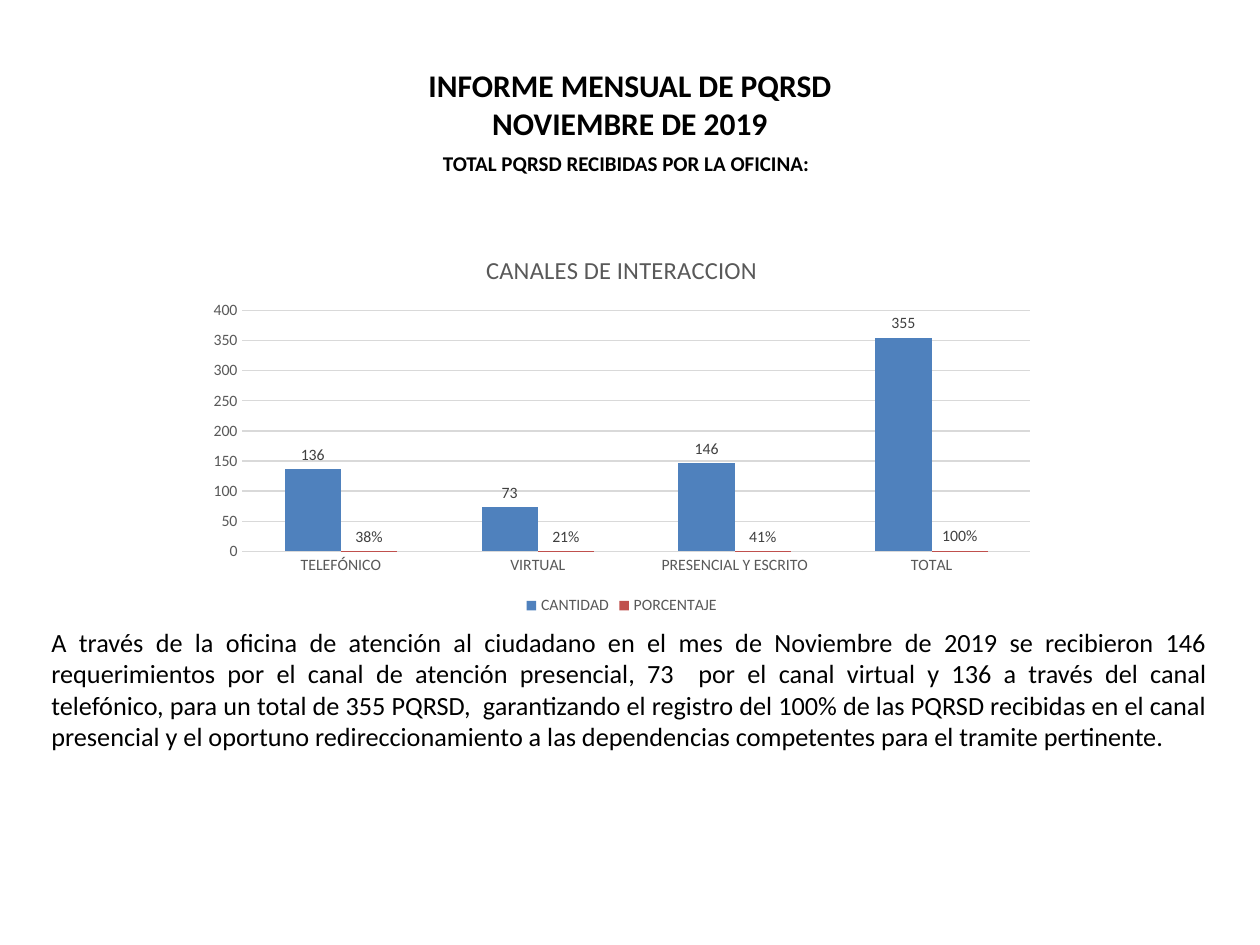
from pptx import Presentation
from pptx.chart.data import CategoryChartData
from pptx.dml.color import RGBColor
from pptx.enum.chart import (XL_CHART_TYPE, XL_LABEL_POSITION,
                             XL_LEGEND_POSITION, XL_TICK_MARK)
from pptx.enum.text import MSO_ANCHOR, PP_ALIGN
from pptx.util import Inches, Pt

WIDE, HIGH = Inches(10), Inches(7.5)
HUES = {"ink": "000000", "axis": "595959", "label": "404040",
        "grid": "D9D9D9", "count": "4F81BD", "share": "C0504D"}
CATS = ["TELEFÓNICO", "VIRTUAL", "PRESENCIAL Y ESCRITO", "TOTAL"]
SERIES = [("CANTIDAD", [136, 73, 146, 355], "General", "count"),
          ("PORCENTAJE", [0.38, 0.21, 0.41, 1], "0%", "share")]
BODY = (
    "A través de la oficina de atención al ciudadano en el mes de Noviembre "
    "de 2019 se recibieron 146 requerimientos por el canal de atención "
    "presencial, 73  por el canal virtual y 136 a través del canal "
    "telefónico, para un total de 355 PQRSD,  garantizando el registro del "
    "100% de las PQRSD recibidas en el canal presencial y el oportuno "
    "redireccionamiento a las dependencias competentes para el tramite "
    "pertinente.")


def color(name):
    return RGBColor.from_string(HUES[name])


def style(font, size, hue="ink", bold=False):
    for key, value in {"name": "Calibri", "size": Pt(size),
                       "bold": bold}.items():
        setattr(font, key, value)
    font.color.rgb = color(hue)


def area(left, top, width, height):
    """Turn shares of the slide's size into lengths."""
    return (int(WIDE * left), int(HIGH * top),
            int(WIDE * width), int(HIGH * height))


def write(shape, text, size, align, bold=False, anchor=MSO_ANCHOR.TOP):
    frame = shape.text_frame
    frame.word_wrap = True
    frame.vertical_anchor = anchor
    frame.text = text
    para = frame.paragraphs[0]
    para.alignment = align
    style(para.font, size, bold=bold)


def add_title(slide, text, box):
    title = slide.shapes.title
    for key, value in zip(("left", "top", "width", "height"), box):
        setattr(title, key, value)
    write(title, text, 18, PP_ALIGN.CENTER, True, MSO_ANCHOR.MIDDLE)


def add_text(slide, text, box, *look):
    write(slide.shapes.add_textbox(*box), text, *look)


def format_axis(axis):
    axis.major_tick_mark = axis.minor_tick_mark = XL_TICK_MARK.NONE
    axis.format.line.fill.background()
    style(axis.tick_labels.font, 9, "axis")


def format_series(series, code, hue):
    series.format.fill.solid()
    series.format.fill.fore_color.rgb = color(hue)
    series.invert_if_negative = False
    labels = series.data_labels
    for key, value in {"show_value": True, "number_format": code,
                       "number_format_is_linked": False,
                       "position": XL_LABEL_POSITION.OUTSIDE_END}.items():
        setattr(labels, key, value)
    style(labels.font, 9, "label")


def add_bars(slide, title, box):
    data = CategoryChartData()
    data.categories = CATS
    for name, values, code, _ in SERIES:
        data.add_series(name, values, code)
    chart = slide.shapes.add_chart(
        XL_CHART_TYPE.COLUMN_CLUSTERED, *box, data).chart
    style(chart.font, 10)

    chart.has_title = True
    chart.chart_title.include_in_layout = False
    head = chart.chart_title.text_frame
    head.text = title
    style(head.paragraphs[0].runs[0].font, 14, "axis")

    chart.has_legend = True
    chart.legend.position = XL_LEGEND_POSITION.BOTTOM
    chart.legend.include_in_layout = False
    style(chart.legend.font, 9, "axis")

    for axis in (chart.category_axis, chart.value_axis):
        format_axis(axis)
    chart.value_axis.tick_labels.number_format = "General"
    chart.value_axis.tick_labels.number_format_is_linked = False
    grid = chart.value_axis.major_gridlines.format.line
    grid.color.rgb = color("grid")
    grid.width = Pt(0.75)

    plot = chart.plots[0]
    plot.gap_width, plot.overlap = 150, 0
    plot.vary_by_categories = False
    for series, (_, _, code, hue) in zip(plot.series, SERIES):
        format_series(series, code, hue)


def main():
    deck = Presentation()
    deck.slide_width, deck.slide_height = WIDE, HIGH
    slide = deck.slides.add_slide(deck.slide_layouts[5])
    add_title(slide, "INFORME MENSUAL DE PQRSD\vNOVIEMBRE DE 2019",
              area(0.05, 0.04, 0.9, 0.14))
    add_text(slide, "TOTAL PQRSD RECIBIDAS POR LA OFICINA:",
             area(0.066, 0.153, 0.862, 0.035), 12, PP_ALIGN.CENTER, True)
    add_text(slide, BODY, area(0.031, 0.656, 0.937, 0.148),
             15, PP_ALIGN.JUSTIFY)
    add_bars(slide, "CANALES DE INTERACCION",
             area(0.156, 0.248, 0.675, 0.408))
    deck.save("out.pptx")


if __name__ == "__main__":
    main()
